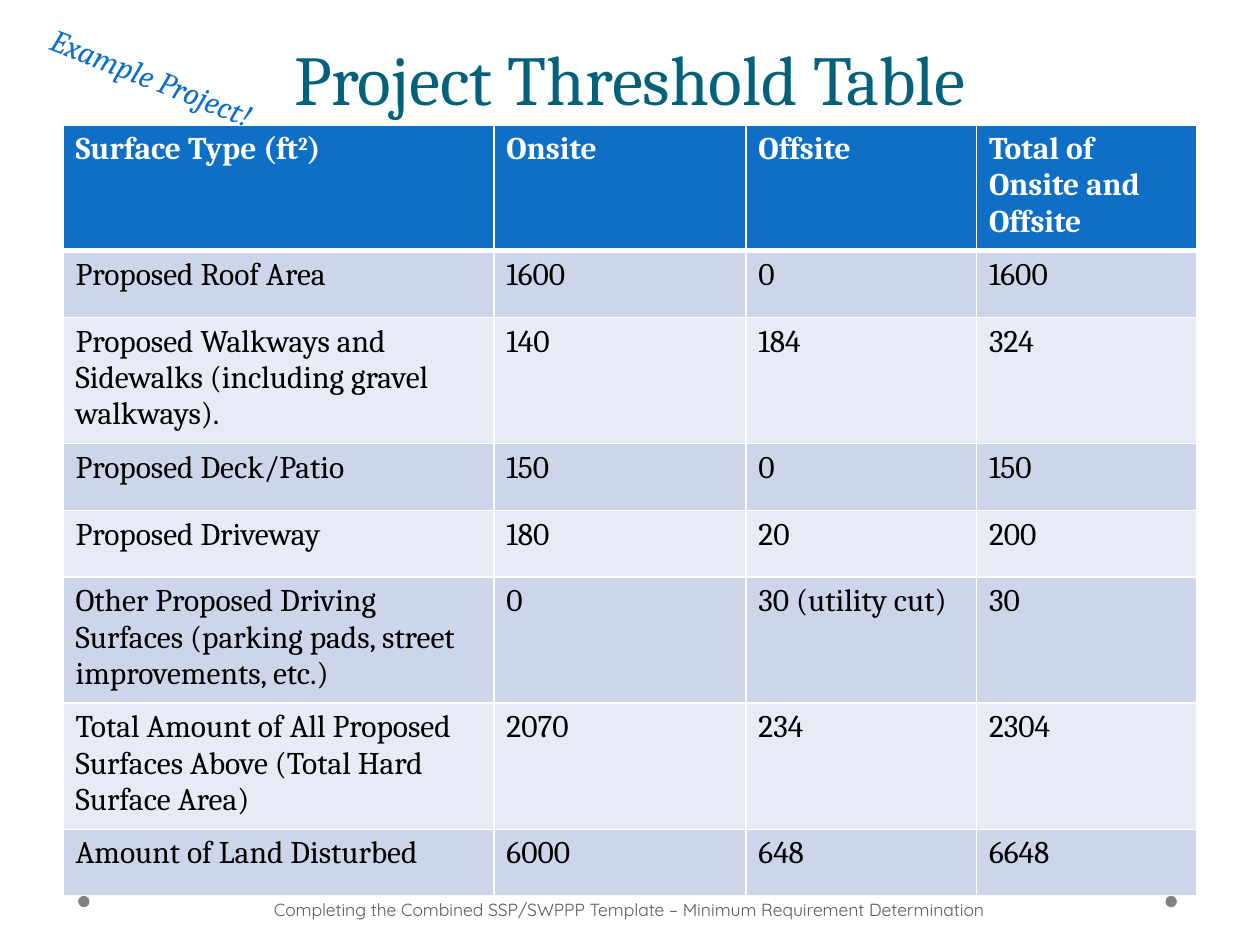
import pptx
import pptx.util
import pptx.dml.color
import pptx.enum.shapes
import pptx.enum.text
import pptx.oxml
import pptx.oxml.ns

Inches = pptx.util.Inches
Pt = pptx.util.Pt
RGBColor = pptx.dml.color.RGBColor
Anchor = pptx.enum.text.MSO_ANCHOR
CENTER = pptx.enum.text.PP_ALIGN.CENTER

WHITE = RGBColor(0xFF, 0xFF, 0xFF)
BLACK = RGBColor(0x00, 0x00, 0x00)
TEAL = RGBColor(0x04, 0x61, 0x7B)
BLUE = RGBColor(0x0F, 0x6F, 0xC6)
GRAY = RGBColor(0x80, 0x80, 0x80)
DARK_GRAY = RGBColor(0x59, 0x59, 0x59)
BANDS = RGBColor(0xCC, 0xD5, 0xEA), RGBColor(0xE7, 0xEB, 0xF5)

TITLE = {"name": "Cambria", "size": Pt(40), "color": TEAL}
NOTE = {"name": "Cambria", "size": Pt(18), "color": BLUE, "italic": True}
FOOTER = {"name": "Quicksand", "size": Pt(10), "color": DARK_GRAY}
HEAD = {"name": "Cambria", "size": Pt(18), "color": WHITE, "bold": True}
BODY = {"name": "Cambria", "size": Pt(18), "color": BLACK, "bold": False}

COL_WIDTHS = 3.42, 2, 1.83, 1.75
HEAD_HEIGHT, ROW_HEIGHT = 0.91, 0.53
HEADERS = "Surface Type (ft²)", "Onsite", "Offsite", "Total of Onsite and Offsite"
ROWS = [
    ("Proposed Roof Area", "1600", "0", "1600"),
    ("Proposed Walkways and Sidewalks (including gravel walkways).", "140", "184", "324"),
    ("Proposed Deck/Patio", "150", "0", "150"),
    ("Proposed Driveway", "180", "20", "200"),
    ("Other Proposed Driving Surfaces (parking pads, street improvements, etc.)",
     "0", "30 (utility cut)", "30"),
    ("Total Amount of All Proposed Surfaces Above (Total Hard Surface Area)",
     "2070", "234", "2304"),
    ("Amount of Land Disturbed", "6000", "648", "6648"),
]


def add_run(p, text, style):
    r = p.add_run()
    r.text = text
    for key, value in style.items():
        if key == "color":
            r.font.color.rgb = value
        else:
            setattr(r.font, key, value)
    return r


def add_text(s, box, text, style, **frame):
    sp = s.shapes.add_textbox(*map(Inches, box))
    tf = sp.text_frame
    tf.word_wrap = True
    for key, value in frame.items():
        setattr(tf, key, value)
    add_run(tf.paragraphs[0], text, style)
    return sp


def add_title(s, box):
    sp = add_text(s, box, "Project Threshold Table", TITLE, vertical_anchor=Anchor.BOTTOM)
    p = sp.text_frame.paragraphs[0]
    p.alignment = CENTER
    p.line_spacing = Pt(58)


def add_note(s, box):
    sp = add_text(s, box, "Example Project!", NOTE)
    sp.rotation = 21.5


def set_borders(cell, bottom):
    tc_pr = cell._tc.get_or_add_tcPr()
    widths = {"lnL": 1, "lnR": 1, "lnT": 1, "lnB": bottom}
    for i, (tag, width) in enumerate(widths.items()):
        tc_pr.insert(i, pptx.oxml.parse_xml(
            f'<a:{tag} {pptx.oxml.ns.nsdecls("a")} w="{Pt(width)}">'
            f'<a:solidFill><a:srgbClr val="{WHITE}"/></a:solidFill></a:{tag}>'))


def fill_cell(cell, text, style, fill, bottom):
    cell.fill.solid()
    cell.fill.fore_color.rgb = fill
    set_borders(cell, bottom)
    p = cell.text_frame.paragraphs[0]
    before, square, after = text.partition("²")
    add_run(p, before, style)
    if square:
        r = add_run(p, "2", style)
        r.font._element.set("baseline", "30000")
        add_run(p, after, style)


def add_threshold_table(s, box):
    shape = s.shapes.add_table(len(ROWS) + 1, len(HEADERS), *map(Inches, box))
    table = shape.table
    for col, width in zip(table.columns, COL_WIDTHS):
        col.width = Inches(width)
    for i, values in enumerate([HEADERS, *ROWS]):
        table.rows[i].height = Inches(ROW_HEIGHT if i else HEAD_HEIGHT)
        style, fill, bottom = (BODY, BANDS[(i - 1) % 2], 1) if i else (HEAD, BLUE, 3)
        for j, text in enumerate(values):
            fill_cell(table.cell(i, j), text, style, fill, bottom)
        if i == 1:
            for j in range(len(HEADERS)):
                top = table.cell(i, j)._tc.tcPr.find(pptx.oxml.ns.qn("a:lnT"))
                top.set("w", str(Pt(3)))


def add_footer(s, box):
    left, top, width, height = box
    for x in (left, left + width - 0.09):
        dot = s.shapes.add_shape(pptx.enum.shapes.MSO_SHAPE.OVAL,
                                 *map(Inches, (x, top + 0.09, 0.09, 0.09)))
        dot.shadow.inherit = False
        dot.fill.solid()
        dot.fill.fore_color.rgb = GRAY
        dot.line.fill.background()
    sp = add_text(s, (left + 0.13, top, width - 0.19, height),
                  "Completing the Combined SSP/SWPPP Template – Minimum Requirement Determination",
                  FOOTER, vertical_anchor=Anchor.MIDDLE, margin_left=Inches(0.05))
    sp.text_frame.paragraphs[0].alignment = CENTER


def main():
    prs = pptx.Presentation()
    prs.slide_width, prs.slide_height = Inches(10), Inches(7.5)
    s = prs.slides.add_slide(prs.slide_layouts[6])
    add_title(s, (0.5, 0, 9, 1))
    add_threshold_table(s, (0.5, 0.99, 9, 4.62))
    add_note(s, (0.26, 0.43, 1.98, 0.4))
    add_footer(s, (0.62, 7.02, 8.72, 0.4))
    prs.save("out.pptx")


if __name__ == "__main__":
    main()
